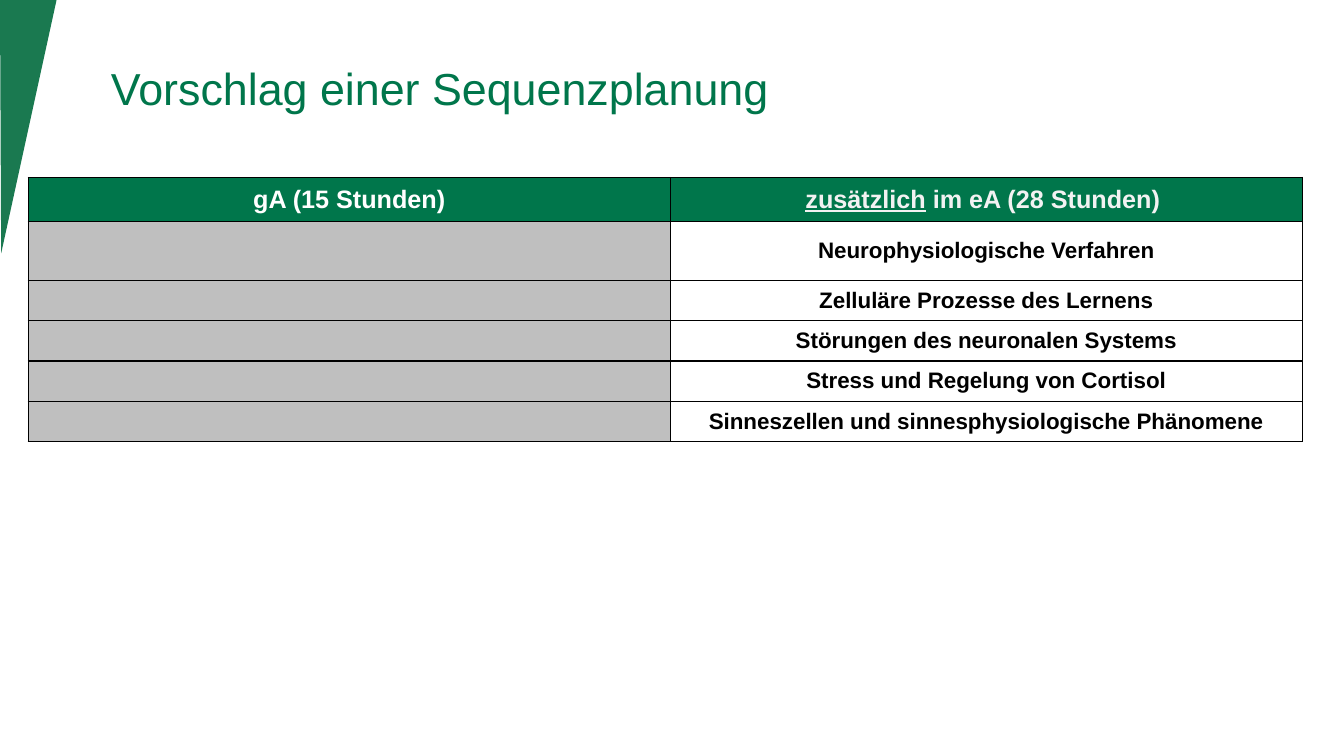
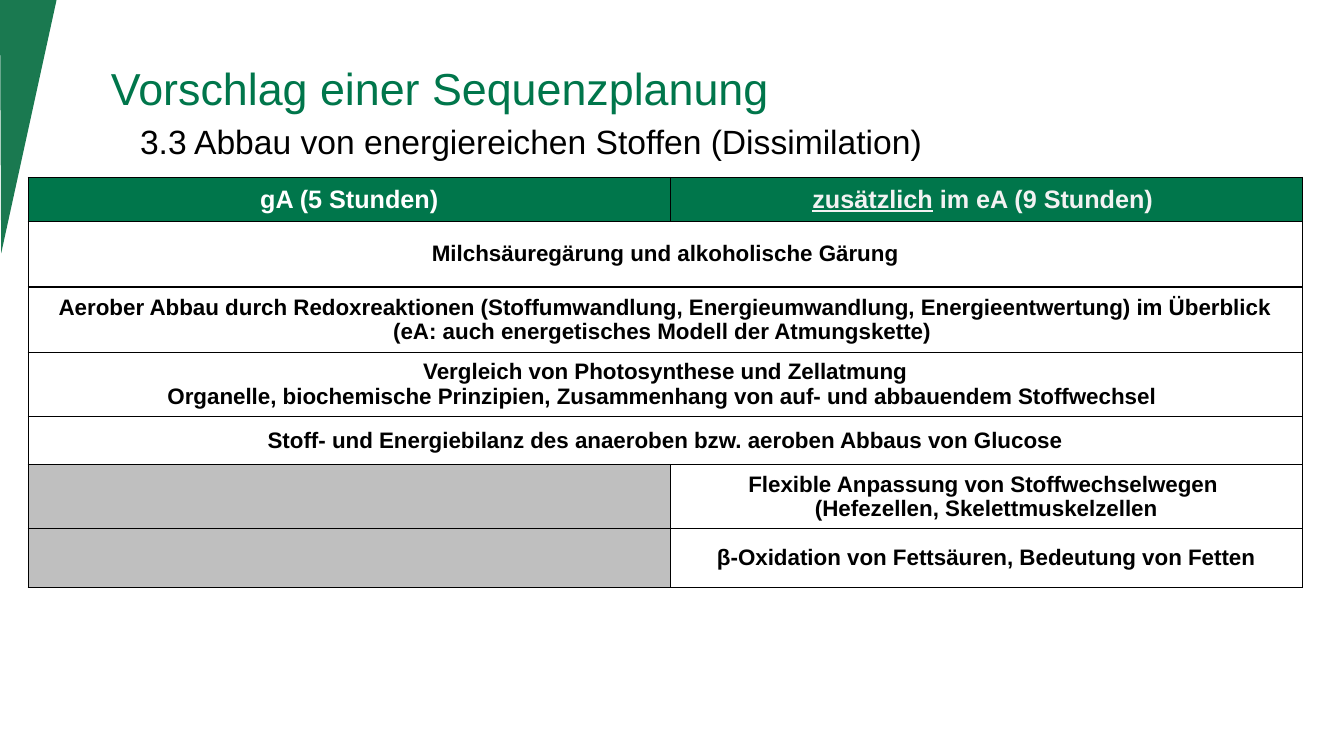
import pptx
import pptx.util
import pptx.dml.color
import pptx.enum.shapes
import pptx.enum.text
import pptx.oxml

Pt = pptx.util.Pt
ALIGN = pptx.enum.text.PP_ALIGN
ANCHOR = pptx.enum.text.MSO_ANCHOR

COLORS = {
    "wedge": "1A7950",
    "green": "00764B",
    "gray": "BFBFBF",
    "white": "FFFFFF",
    "pale": "F2F2F2",
    "black": "000000",
}
FONT = "Arial"
SLIDE_WIDTH, SLIDE_HEIGHT = 960, 540
TITLE = "Vorschlag einer Sequenzplanung"
TABLE_LEFT, TABLE_TOP = 20.2, 126.7
COLUMN_WIDTHS = (458.6, 451.4)
HEADER_HEIGHT = 31.5


def rgb(name):
    return pptx.dml.color.RGBColor.from_string(COLORS[name])


def style_font(para, size, color, bold=False):
    para.font.name = FONT
    para.font.size = Pt(size)
    para.font.bold = bold
    para.font.color.rgb = rgb(color)


def add_wedge(page):
    wedge = page.shapes.add_shape(
        pptx.enum.shapes.MSO_SHAPE.ISOSCELES_TRIANGLE, 0, 0, Pt(40.4), Pt(181))
    wedge.adjustments[0] = 0.98
    wedge.rotation = 180
    wedge.shadow.inherit = False
    wedge.fill.solid()
    wedge.fill.fore_color.rgb = rgb("wedge")
    wedge.line.fill.background()


def add_heading(page, text, top, height, indent, size, color, anchor):
    box = page.shapes.add_textbox(0, Pt(top), Pt(SLIDE_WIDTH), Pt(height))
    frame = box.text_frame
    frame.word_wrap = True
    frame.vertical_anchor = anchor
    frame.margin_left = Pt(indent)
    para = frame.paragraphs[0]
    para.text = text
    style_font(para, size, color)


def add_borders(cell):
    properties = cell._tc.get_or_add_tcPr()
    for index, side in enumerate(("lnL", "lnR", "lnT", "lnB")):
        line = pptx.oxml.parse_xml(
            f'<a:{side} xmlns:a="http://schemas.openxmlformats.org/drawingml/2006/main"'
            f' w="{Pt(1)}"><a:solidFill><a:srgbClr val="{COLORS["black"]}"/>'
            f'</a:solidFill></a:{side}>')
        properties.insert(index, line)


def fill_cell(cell, lines, fill, size=16, color="black"):
    cell.fill.solid()
    cell.fill.fore_color.rgb = rgb(fill)
    cell.vertical_anchor = ANCHOR.MIDDLE
    add_borders(cell)
    frame = cell.text_frame
    for index, line in enumerate(lines):
        para = frame.add_paragraph() if index else frame.paragraphs[0]
        para.alignment = ALIGN.CENTER
        style_font(para, size, color, bold=True)
        for text, underlined in line:
            span = para.add_run()
            span.text = text
            if underlined:
                span.font.underline = True


def plain(*texts):
    return [[(text, False)] for text in texts]


def add_plan(page, basic_hours, extended_hours, rows):
    heights = [HEADER_HEIGHT] + [height for height, _, _ in rows]
    table = page.shapes.add_table(
        len(heights), 2, Pt(TABLE_LEFT), Pt(TABLE_TOP),
        Pt(sum(COLUMN_WIDTHS)), Pt(sum(heights))).table
    table.horz_banding = False
    for column, width in zip(table.columns, COLUMN_WIDTHS):
        column.width = Pt(width)
    for row, height in zip(table.rows, heights):
        row.height = Pt(height)
    fill_cell(table.cell(0, 0), plain(f"gA ({basic_hours} Stunden)"),
              "green", 18, "white")
    fill_cell(table.cell(0, 1),
              [[("zusätzlich", True), (f" im eA ({extended_hours} Stunden) ", False)]],
              "green", 18, "pale")
    for index, (_, shared, texts) in enumerate(rows, 1):
        left, right = table.cell(index, 0), table.cell(index, 1)
        if shared:
            fill_cell(left, plain(*texts), "white")
            fill_cell(right, [], "white")
            left.merge(right)
        else:
            fill_cell(left, plain(""), "gray")
            fill_cell(right, plain(*texts), "white")


def add_page(deck, basic_hours, extended_hours, rows, subtitle=None):
    page = deck.slides.add_slide(deck.slide_layouts[6])
    add_wedge(page)
    add_heading(page, TITLE, 28.2, 68.4, 79.2, 32, "green", ANCHOR.MIDDLE)
    if subtitle:
        add_heading(page, subtitle, 82.8, 34, 100, 24, "black", ANCHOR.TOP)
    add_plan(page, basic_hours, extended_hours, rows)


def main():
    deck = pptx.Presentation()
    deck.slide_width, deck.slide_height = Pt(SLIDE_WIDTH), Pt(SLIDE_HEIGHT)
    add_page(deck, 15, 28, [
        (42, False, ["Neurophysiologische Verfahren"]),
        (27.4, False, ["Zelluläre Prozesse des Lernens"]),
        (27.4, False, ["Störungen des neuronalen Systems"]),
        (27.4, False, ["Stress und Regelung von Cortisol"]),
        (27.4, False, ["Sinneszellen und sinnesphysiologische Phänomene"]),
    ])
    add_page(deck, 5, 9, [
        (46.8, True, ["Milchsäuregärung und alkoholische Gärung"]),
        (46.8, True, [
            "Aerober Abbau durch Redoxreaktionen (Stoffumwandlung, "
            "Energieumwandlung, Energieentwertung) im Überblick",
            "(eA: auch energetisches Modell der Atmungskette) "]),
        (43, True, [
            "Vergleich von Photosynthese und Zellatmung",
            "Organelle, biochemische Prinzipien, Zusammenhang von auf- und "
            "abbauendem Stoffwechsel "]),
        (34.6, True, [
            "Stoff- und Energiebilanz des anaeroben bzw. aeroben Abbaus von Glucose"]),
        (43, False, [
            "Flexible Anpassung von Stoffwechselwegen ",
            "(Hefezellen, Skelettmuskelzellen"]),
        (42, False, ["β-Oxidation von Fettsäuren, Bedeutung von Fetten"]),
    ], "3.3 Abbau von energiereichen Stoffen (Dissimilation)")
    deck.save("out.pptx")


if __name__ == "__main__":
    main()
